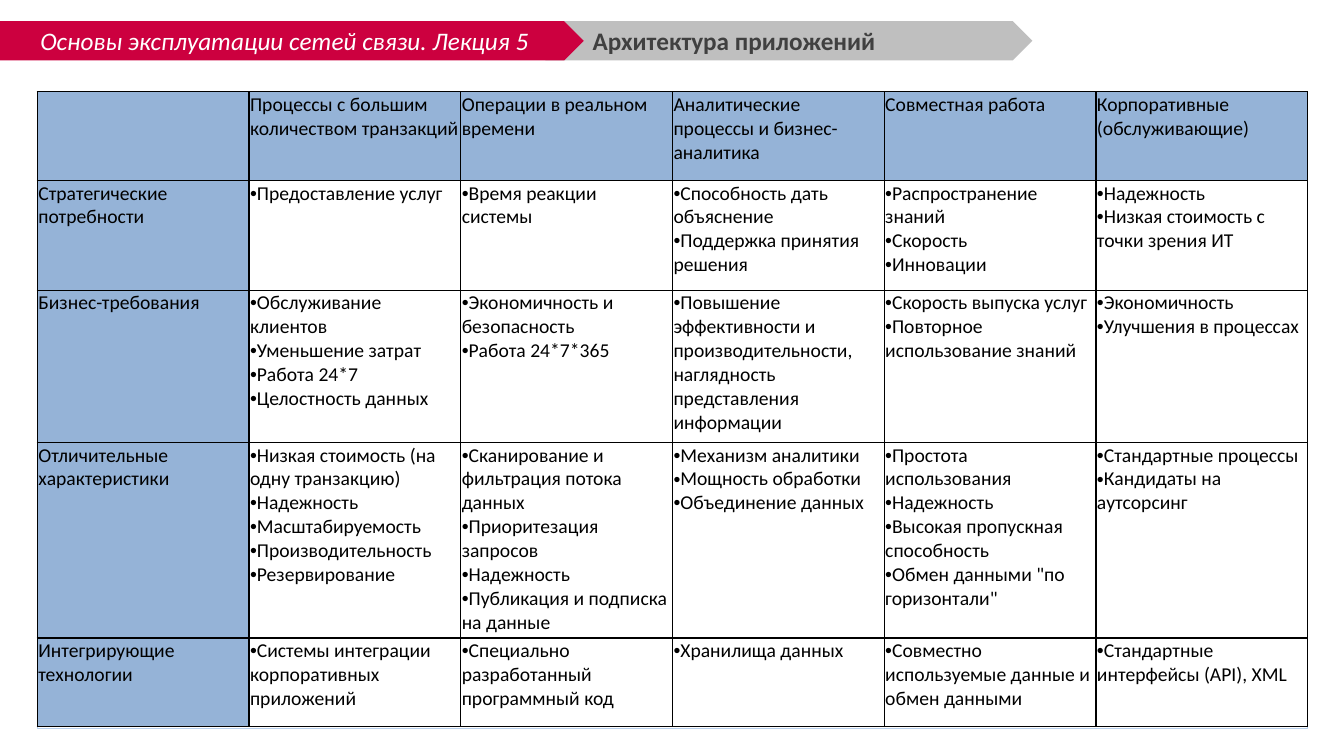
from lxml import etree
from pptx import Presentation
from pptx.dml.color import RGBColor
from pptx.enum import shapes, text
from pptx.oxml import ns
from pptx.util import Inches, Pt

CRIMSON = RGBColor(0xCC, 0x00, 0x3F)
GREY = RGBColor(0xBF, 0xBF, 0xBF)
DARK = RGBColor(0x40, 0x40, 0x40)
WHITE = RGBColor(0xFF, 0xFF, 0xFF)
BLACK = RGBColor(0x00, 0x00, 0x00)
HEADER_BLUE = RGBColor(0x95, 0xB3, 0xD7)
FRAME_BLUE = RGBColor(0xB8, 0xD0, 0xED)

FONT = "Calibri"
BANNER_TOP, BANNER_HEIGHT = 0.21, 0.39
COLUMN_WIDTH = 2.1
ROW_HEIGHTS = [0.88, 1.09, 1.51, 1.94, 0.88]

APPLICATION_TYPES = [
    "Процессы с большим количеством транзакций",
    "Операции в реальном времени",
    "Аналитические процессы и бизнес-аналитика",
    "Совместная работа",
    "Корпоративные (обслуживающие)",
]

ASPECTS = {
    "Стратегические потребности": [
        ["Предоставление услуг"],
        ["Время реакции системы"],
        ["Способность дать объяснение", "Поддержка принятия решения"],
        ["Распространение знаний", "Скорость", "Инновации"],
        ["Надежность", "Низкая стоимость с точки зрения ИТ"],
    ],
    "Бизнес-требования": [
        ["Обслуживание клиентов", "Уменьшение затрат", "Работа 24*7",
         "Целостность данных"],
        ["Экономичность и безопасность", "Работа 24*7*365"],
        ["Повышение эффективности и производительности, "
         "наглядность представления информации"],
        ["Скорость выпуска услуг", "Повторное использование знаний"],
        ["Экономичность", "Улучшения в процессах"],
    ],
    "Отличительные характеристики": [
        ["Низкая стоимость (на одну транзакцию)", "Надежность",
         "Масштабируемость", "Производительность", "Резервирование"],
        ["Сканирование и фильтрация потока данных", "Приоритезация запросов",
         "Надежность", "Публикация и подписка на данные"],
        ["Механизм аналитики", "Мощность обработки", "Объединение данных"],
        ["Простота использования", "Надежность",
         "Высокая пропускная способность", "Обмен данными \"по горизонтали\""],
        ["Стандартные процессы", "Кандидаты на аутсорсинг"],
    ],
    "Интегрирующие технологии": [
        ["Системы интеграции корпоративных приложений"],
        ["Специально разработанный программный код"],
        ["Хранилища данных"],
        ["Совместно используемые данные и обмен данными"],
        ["Стандартные интерфейсы (API), XML"],
    ],
}


def add_run(paragraph, wording, size, color, bold=False, italic=False):
    run = paragraph.add_run()
    run.text = wording
    font = run.font
    font.name, font.size = FONT, Pt(size)
    font.bold, font.italic = bold, italic
    font.color.rgb = color


def add_banner(slide, left, width, color):
    banner = slide.shapes.add_shape(
        shapes.MSO_SHAPE.PENTAGON, Inches(left), Inches(BANNER_TOP),
        Inches(width), Inches(BANNER_HEIGHT))
    banner.shadow.inherit = False
    banner.fill.solid()
    banner.fill.fore_color.rgb = color
    banner.line.fill.background()
    return banner


def add_frame(slide):
    frame = slide.shapes.add_shape(
        shapes.MSO_SHAPE.RECTANGLE, Inches(0.37), Inches(0.92),
        Inches(12.6), Inches(6.3))
    frame.shadow.inherit = False
    frame.fill.background()
    frame.line.color.rgb = FRAME_BLUE
    frame.line.width = Pt(0.25)


def add_lecture_name(slide):
    banner = add_banner(slide, -0.05, 5.84, CRIMSON)
    banner.text_frame.vertical_anchor = text.MSO_ANCHOR.MIDDLE
    lecture = banner.text_frame.paragraphs[0]
    lecture.alignment = text.PP_ALIGN.CENTER
    add_run(lecture, "Основы эксплуатации сетей связи. Лекция 5", 18, WHITE,
            italic=True)


def add_topic(slide):
    topic = slide.shapes.add_textbox(
        Inches(5.78), Inches(BANNER_TOP), Inches(4.14), Inches(BANNER_HEIGHT))
    topic.text_frame.word_wrap = True
    topic.text_frame.vertical_anchor = text.MSO_ANCHOR.MIDDLE
    add_run(topic.text_frame.paragraphs[0], "Архитектура приложений", 18, DARK,
            bold=True)


def add_borders(cell):
    properties = cell._tc.get_or_add_tcPr()
    for side in ("a:lnL", "a:lnR", "a:lnT", "a:lnB"):
        border = etree.SubElement(properties, ns.qn(side), w=str(Pt(1)))
        fill = etree.SubElement(border, ns.qn("a:solidFill"))
        etree.SubElement(fill, ns.qn("a:srgbClr"), val=str(BLACK))


def fill_cell(cell, entries, heading):
    cell.margin_left = cell.margin_right = Inches(0.01)
    cell.margin_top = cell.margin_bottom = Inches(0.01)
    add_borders(cell)
    if heading:
        cell.fill.solid()
        cell.fill.fore_color.rgb = HEADER_BLUE
    else:
        cell.fill.background()
    for index, entry in enumerate(entries):
        frame = cell.text_frame
        paragraph = frame.add_paragraph() if index else frame.paragraphs[0]
        if not heading:
            bullet = paragraph._p.get_or_add_pPr()
            etree.SubElement(bullet, ns.qn("a:buFont"), typeface="Arial")
            etree.SubElement(bullet, ns.qn("a:buChar"), char="•")
        add_run(paragraph, entry, 14, BLACK)


def add_comparison(slide):
    rows = [[[]] + [[name] for name in APPLICATION_TYPES]]
    rows += [[[aspect]] + entries for aspect, entries in ASPECTS.items()]
    columns = len(rows[0])
    comparison = slide.shapes.add_table(
        len(rows), columns, Inches(0.37), Inches(0.91),
        Inches(COLUMN_WIDTH * columns), Inches(sum(ROW_HEIGHTS))).table
    for column in comparison.columns:
        column.width = Inches(COLUMN_WIDTH)
    for row, height in zip(comparison.rows, ROW_HEIGHTS):
        row.height = Inches(height)
    for r, row in enumerate(rows):
        for c, entries in enumerate(row):
            fill_cell(comparison.cell(r, c), entries, r == 0 or c == 0)


def main():
    deck = Presentation()
    deck.slide_width, deck.slide_height = Inches(13.33), Inches(7.5)
    slide = deck.slides.add_slide(deck.slide_layouts[6])
    add_banner(slide, 5.41, 4.83, GREY)
    add_frame(slide)
    add_lecture_name(slide)
    add_topic(slide)
    add_comparison(slide)
    deck.save("out.pptx")


if __name__ == "__main__":
    main()
